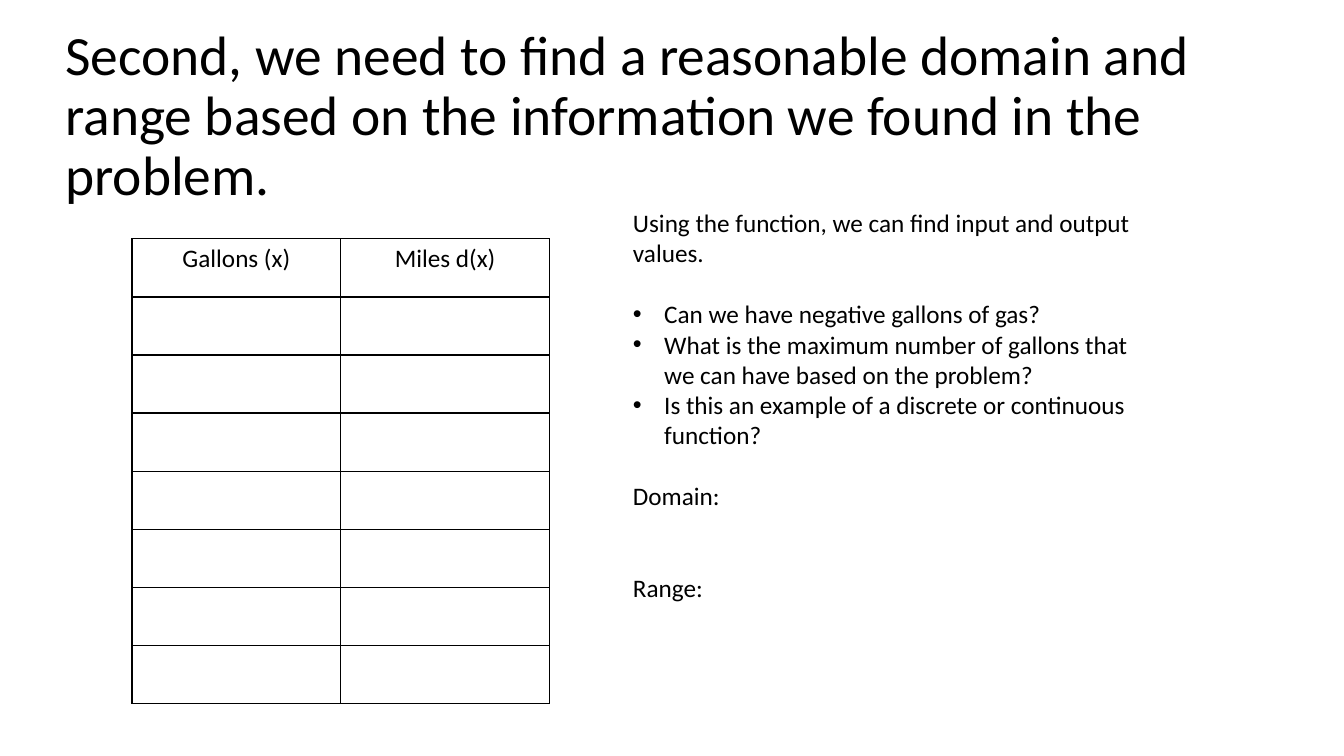
"""Builds a slide on finding the domain and range of a gallons-to-miles function."""
from dataclasses import dataclass

from lxml import etree
from pptx import Presentation
from pptx.dml.color import RGBColor
from pptx.enum.text import MSO_ANCHOR, PP_ALIGN
from pptx.oxml.ns import qn
from pptx.util import Inches, Pt

LEFT, CENTER = PP_ALIGN.LEFT, PP_ALIGN.CENTER
TOP, MIDDLE = MSO_ANCHOR.TOP, MSO_ANCHOR.MIDDLE

TITLE = ("Second, we need to find a reasonable domain and range "
         "based on the information we found in the problem.")
HEADERS = ["Gallons (x)", "Miles d(x)"]
BLANK_ROWS = 7
NOTES = [
    {"text": "Using the function, we can find input and output values.", "lines_after": 1},
    {"text": "Can we have negative gallons of gas?", "bullet": True},
    {"text": "What is the maximum number of gallons that we can have based on the problem?",
     "bullet": True},
    {"text": "Is this an example of a discrete or continuous function?",
     "bullet": True, "lines_after": 1},
    {"text": "Domain:", "lines_after": 2},
    {"text": "Range:"},
]

TITLE_AREA = (0.55, 0.44, 11.5, 1.45)
TABLE_CORNER = (1.31, 2.37)
NOTES_AREA = (6.18, 2.01, 5.37, 4.64)
COLUMN_WIDTH, ROW_HEIGHT = 2.07, 0.576


@dataclass(frozen=True)
class Theme:
    font: str = "Calibri"
    ink: RGBColor = RGBColor(0, 0, 0)
    title_size: float = 39.6
    body_size: float = 18
    line_height: float = 22
    border: float = 1
    indent: float = 0.31


THEME = Theme()


def write(para, text, size=THEME.body_size, align=LEFT, spacing=None,
          bullet=False, lines_after=0):
    para.alignment = align
    para.space_after = Pt(lines_after * THEME.line_height)
    if spacing:
        para.line_spacing = spacing
    if bullet:
        properties = para._p.get_or_add_pPr()
        properties.set("marL", str(Inches(THEME.indent)))
        properties.set("indent", str(-Inches(THEME.indent)))
        etree.SubElement(properties, qn("a:buFont")).set("typeface", "Arial")
        etree.SubElement(properties, qn("a:buChar")).set("char", "•")
    span = para.add_run()
    span.text = text
    span.font.name = THEME.font
    span.font.size = Pt(size)
    span.font.color.rgb = THEME.ink


def add_text(page, area, items, anchor=TOP):
    box = page.shapes.add_textbox(*map(Inches, area))
    frame = box.text_frame
    frame.word_wrap = True
    frame.vertical_anchor = anchor
    for index, item in enumerate(items):
        para = frame.add_paragraph() if index else frame.paragraphs[0]
        write(para, **item)


def outline(cell):
    properties = cell._tc.get_or_add_tcPr()
    for position, side in enumerate(("lnL", "lnR", "lnT", "lnB")):
        line = etree.Element(qn(f"a:{side}"), w=str(Pt(THEME.border)))
        fill = etree.SubElement(line, qn("a:solidFill"))
        etree.SubElement(fill, qn("a:srgbClr")).set("val", str(THEME.ink))
        properties.insert(position, line)


def add_value_table(page):
    rows, columns = BLANK_ROWS + 1, len(HEADERS)
    size = (columns * COLUMN_WIDTH, rows * ROW_HEIGHT)
    table = page.shapes.add_table(rows, columns, *map(Inches, TABLE_CORNER + size)).table
    table.first_row = False
    table.horz_banding = False
    for cell in table.iter_cells():
        cell.fill.background()
        outline(cell)
    for column, header in enumerate(HEADERS):
        write(table.cell(0, column).text_frame.paragraphs[0], header, align=CENTER)


def main():
    deck = Presentation()
    deck.slide_width, deck.slide_height = Inches(13.33), Inches(7.5)
    page = deck.slides.add_slide(deck.slide_layouts[6])
    title = {"text": TITLE, "size": THEME.title_size, "spacing": 0.9}
    add_text(page, TITLE_AREA, [title], anchor=MIDDLE)
    add_value_table(page)
    add_text(page, NOTES_AREA, NOTES)
    deck.save("out.pptx")


if __name__ == "__main__":
    main()
